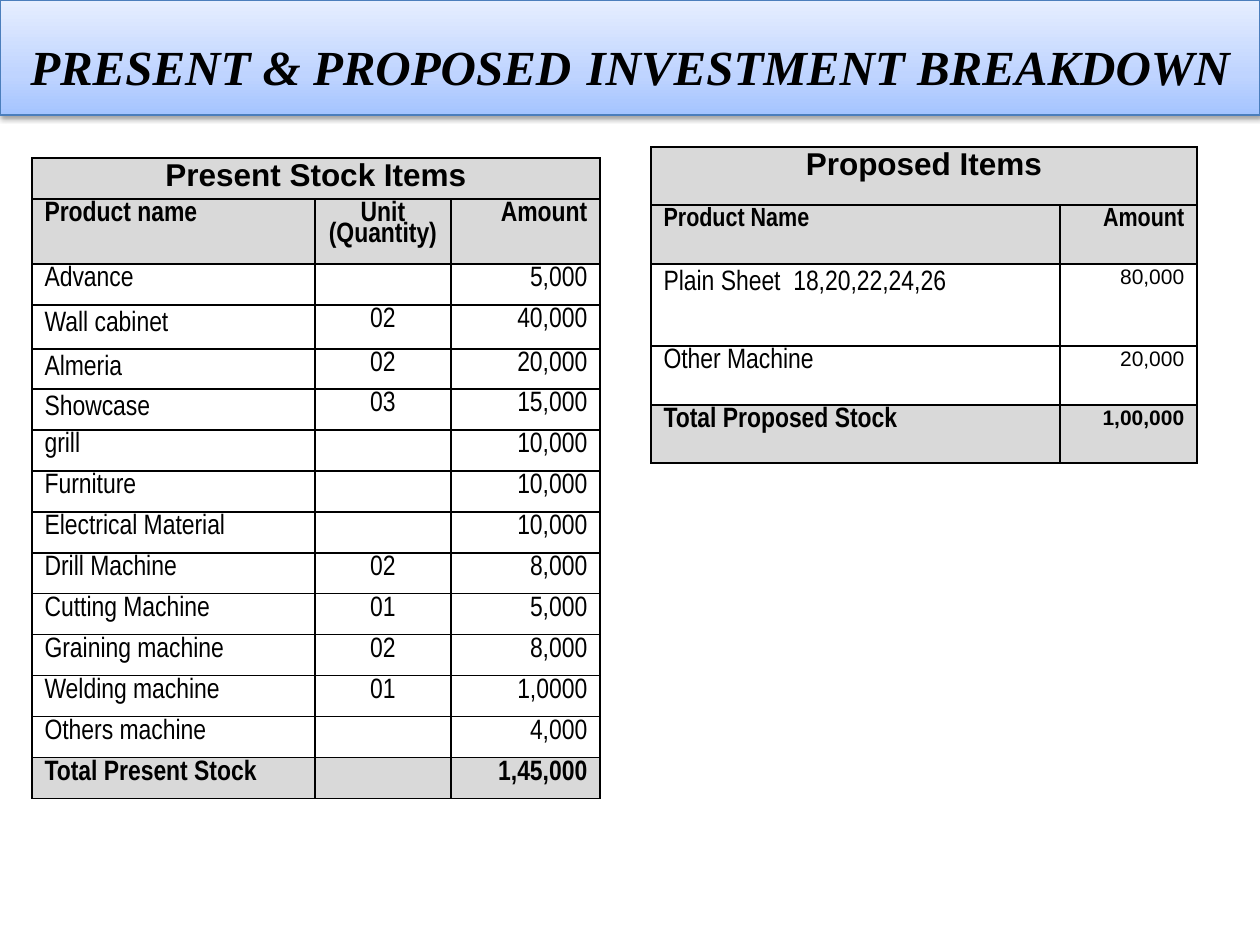
from lxml.etree import SubElement
from pptx import Presentation
from pptx.dml.color import RGBColor
from pptx.enum.text import MSO_ANCHOR, MSO_AUTO_SIZE, PP_ALIGN
from pptx.oxml.ns import qn
from pptx.util import Pt

PX = 914400 / 126
BLACK = RGBColor(0x00, 0x00, 0x00)
GRAY = RGBColor(0xD9, 0xD9, 0xD9)
BLUE_LINE = RGBColor(0x4B, 0x7E, 0xBC)
BANNER_STOPS = (
    (0, RGBColor(0xA4, 0xC4, 0xFF)),
    (35, RGBColor(0xBF, 0xD4, 0xFF)),
    (100, RGBColor(0xE6, 0xEE, 0xFF)),
)
LEFT, CENTER, RIGHT = PP_ALIGN.LEFT, PP_ALIGN.CENTER, PP_ALIGN.RIGHT
NARROW = "Arial Narrow"

PRESENT_ROWS = (
    ("Product name", "Unit (Quantity)", "Amount"),
    ("Advance", "", "5,000"),
    ("Wall cabinet", "02", "40,000"),
    ("Almeria", "02", "20,000"),
    ("Showcase", "03", "15,000"),
    ("grill", "", "10,000"),
    ("Furniture", "", "10,000"),
    ("Electrical Material", "", "10,000"),
    ("Drill Machine", "02", "8,000"),
    ("Cutting Machine", "01", "5,000"),
    ("Graining machine", "02", "8,000"),
    ("Welding machine", "01", "1,0000"),
    ("Others machine", "", "4,000"),
    ("Total Present Stock", "", "1,45,000"),
)
PROPOSED_ROWS = (
    ("Product Name", "Amount"),
    ("Plain Sheet  18,20,22,24,26", "80,000"),
    ("Other Machine", "20,000"),
    ("Total Proposed Stock", "1,00,000"),
)
SINGLE_SPACED = {"Wall cabinet", "Almeria", "Showcase", PROPOSED_ROWS[1][0]}


def px(length):
    return round(length * PX)


def add_text(paragraph, text, font=NARROW, size=16, bold=False, italic=False,
             align=LEFT, spacing=1.0):
    paragraph.alignment = align
    paragraph.line_spacing = spacing
    run = paragraph.add_run()
    run.text = text
    run.font.name = font
    run.font.size = Pt(size)
    run.font.bold = bold
    run.font.italic = italic
    run.font.color.rgb = BLACK


def add_color(parent, color, alpha=None):
    element = SubElement(parent, qn("a:srgbClr"), val=str(color))
    if alpha is not None:
        SubElement(element, qn("a:alpha"), val=str(alpha * 1000))


def fill_gradient(shape, stops):
    shape.fill.gradient()
    shape.fill.gradient_angle = 90
    stop_list = shape._element.spPr.find(".//" + qn("a:gsLst"))
    for stop in list(stop_list):
        stop_list.remove(stop)
    for position, color in stops:
        add_color(SubElement(stop_list, qn("a:gs"), pos=str(position * 1000)), color)


def add_shadow(shape):
    shape.shadow.inherit = False
    effects = shape._element.spPr.find(qn("a:effectLst"))
    shadow = SubElement(effects, qn("a:outerShdw"), blurRad=str(Pt(3.1)),
                        dist=str(Pt(1.6)), dir="5400000", rotWithShape="0")
    add_color(shadow, BLACK, alpha=38)


def format_title(title):
    title.left, title.top, title.width, title.height = 0, 0, px(1260), px(115)
    fill_gradient(title, BANNER_STOPS)
    title.line.color.rgb = BLUE_LINE
    title.line.width = Pt(0.75)
    add_shadow(title)
    frame = title.text_frame
    frame.word_wrap = True
    frame.auto_size = MSO_AUTO_SIZE.NONE
    frame.vertical_anchor = MSO_ANCHOR.MIDDLE
    paragraph = frame.paragraphs[0]
    words = dict(font="Times New Roman", size=28, bold=True, italic=True, align=CENTER)
    add_text(paragraph, "PRESENT & PROPOSED", **words)
    add_text(paragraph, " ", font="Cambria", size=40, bold=True, align=CENTER)
    add_text(paragraph, "INVESTMENT BREAKDOWN", **words)


def format_cell(cell, shaded):
    cell.margin_top, cell.margin_bottom = px(6), 0
    properties = cell._tc.get_or_add_tcPr()
    for side in ("lnL", "lnR", "lnT", "lnB"):
        border = SubElement(properties, qn(f"a:{side}"), w=str(Pt(1)))
        add_color(SubElement(border, qn("a:solidFill")), BLACK)
    if shaded:
        cell.fill.solid()
        cell.fill.fore_color.rgb = GRAY
    else:
        cell.fill.background()


def add_stock_table(slide, left, top, widths, heights, heading, rows, aligns,
                    header_size=16, amount_style=None):
    frame = slide.shapes.add_table(len(heights), len(widths), px(left), px(top),
                                   px(sum(widths)), px(sum(heights)))
    table = frame.table
    table.first_row = table.horz_banding = False
    for column, width in zip(table.columns, widths):
        column.width = px(width)
    for row, height in zip(table.rows, heights):
        row.height = px(height)

    for cell in table.rows[0].cells:
        format_cell(cell, shaded=True)
    table.cell(0, 0).merge(table.cell(0, len(widths) - 1))
    add_text(table.cell(0, 0).text_frame.paragraphs[0], heading, font="Arial",
             size=18, bold=True, align=CENTER, spacing=0.8)

    for row_index, values in enumerate(rows, start=1):
        is_header = row_index == 1
        strong = is_header or row_index == len(rows)
        for column_index, (value, align) in enumerate(zip(values, aligns)):
            cell = table.cell(row_index, column_index)
            format_cell(cell, shaded=strong)
            paragraph = cell.text_frame.paragraphs[0]
            if not value:
                paragraph.font.size = Pt(16)
                continue
            style = {"size": header_size} if is_header else {}
            if amount_style and align == RIGHT and not is_header:
                style = amount_style
            add_text(paragraph, value, bold=strong, align=align,
                     spacing=1.0 if value in SINGLE_SPACED else 0.8, **style)


def main():
    presentation = Presentation()
    presentation.slide_width, presentation.slide_height = px(1260), px(945)
    slide = presentation.slides.add_slide(presentation.slide_layouts[5])
    format_title(slide.shapes.title)
    add_stock_table(slide, 32, 158, (283, 136, 149), (41, 65, 41, 44, 40) + (41,) * 10,
                    "Present Stock Items", PRESENT_ROWS, (LEFT, CENTER, RIGHT))
    add_stock_table(slide, 651, 147, (409, 137), (58, 59, 82, 59, 58),
                    "Proposed Items", PROPOSED_ROWS, (LEFT, RIGHT), header_size=15,
                    amount_style={"font": "Arial", "size": 12})
    presentation.save("out.pptx")


if __name__ == "__main__":
    main()
